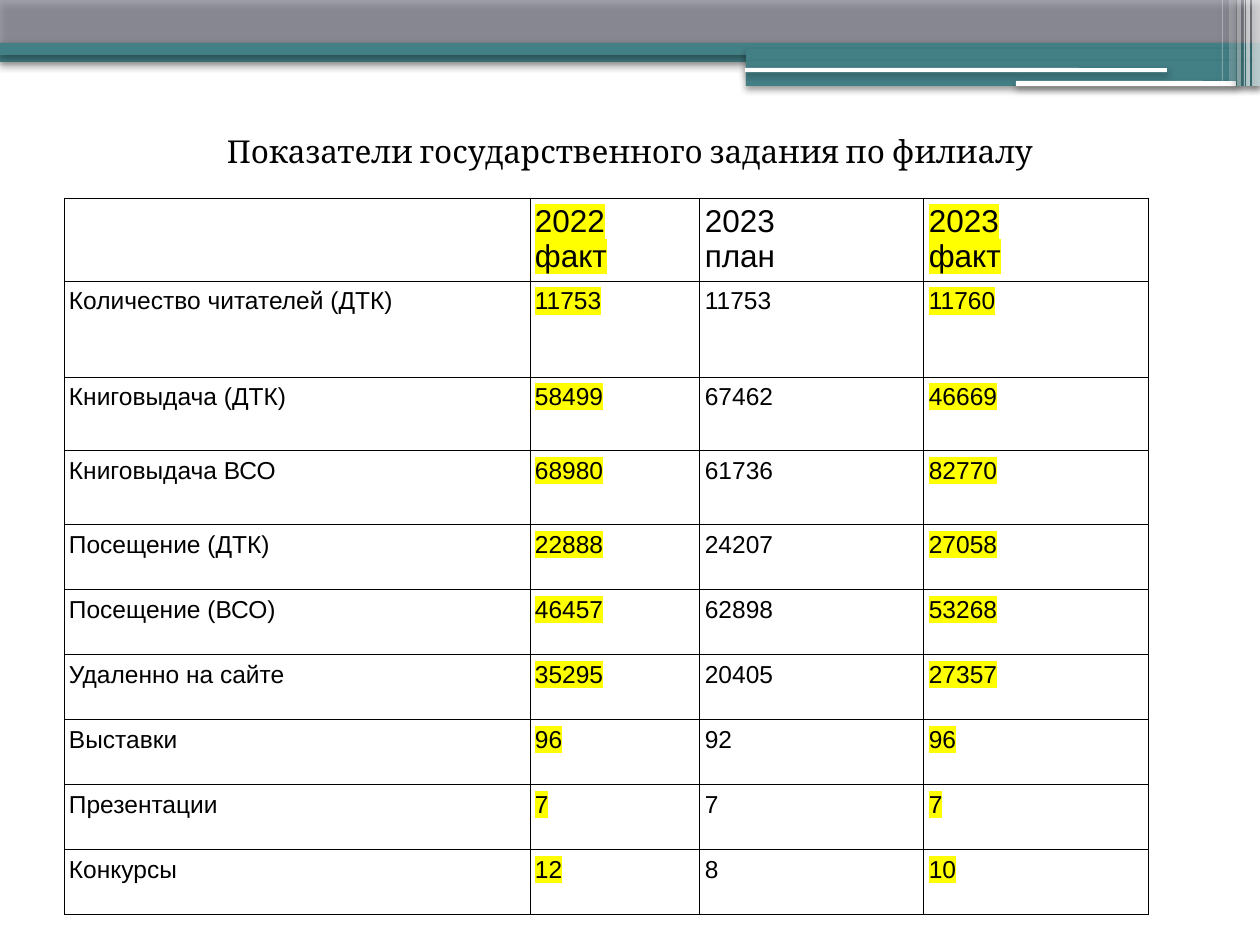
"""Build a slide with a table of state task figures under a banded header."""
from dataclasses import dataclass

from lxml.etree import SubElement
from pptx import Presentation
from pptx.dml.color import RGBColor
from pptx.enum.shapes import MSO_SHAPE
from pptx.enum.text import MSO_ANCHOR, MSO_AUTO_SIZE, PP_ALIGN
from pptx.oxml import parse_xml
from pptx.oxml.ns import nsdecls, qn
from pptx.slide import Slide
from pptx.text.text import TextFrame
from pptx.util import Pt

SCALE = 914400 / 126
COLORS = {"teal": "438086", "slate": "424456", "white": "FFFFFF",
          "black": "000000", "mark": "FFFF00"}
WIDTHS = [466, 170, 224, 225]
HEIGHTS = [83, 96, 74, 74] + [65] * 6
ROWS = [
    ("", "2022\nфакт", "2023\nплан", "2023\nфакт"),
    ("Количество читателей (ДТК)", "11753", "11753", "11760"),
    ("Книговыдача (ДТК)", "58499", "67462", "46669"),
    ("Книговыдача ВСО", "68980", "61736", "82770"),
    ("Посещение (ДТК)", "22888", "24207", "27058"),
    ("Посещение (ВСО)", "46457", "62898", "53268"),
    ("Удаленно на сайте", "35295", "20405", "27357"),
    ("Выставки", "96", "92", "96"),
    ("Презентации", "7", "7", "7"),
    ("Конкурсы", "12", "8", "10"),
]
FACTS = (1, 3)


@dataclass
class Bar:
    left: int
    top: int
    width: int
    height: int
    color: str = "teal"
    alpha: int = 100
    round: bool = False


BARS = [
    Bar(0, 50, 1260, 12),
    Bar(0, 0, 1260, 43, "slate", 50),
    Bar(0, 43, 1260, 12),
    Bar(746, 49, 514, 12),
    Bar(746, 61, 514, 25),
    Bar(745, 68, 422, 4, "white", round=True),
    Bar(1016, 81, 220, 5, "white", round=True),
    Bar(1252, 0, 8, 86, "white", 65),
    Bar(1246, 0, 4, 86, "white", 65),
    Bar(1244, 0, 1, 86, "white", 60),
    Bar(1237, 0, 4, 86, "white", 40),
    Bar(1229, 0, 7, 81, "white", 20),
    Bar(1222, 0, 1, 81, "white", 30),
]


def px(size: int) -> int:
    """Turn pixels into EMU."""
    return round(size * SCALE)


def rgb(name: str) -> RGBColor:
    """Look up a colour by name."""
    return RGBColor.from_string(COLORS[name])


def draw_bar(slide: Slide, bar: Bar) -> None:
    """Draw one header bar with a soft shadow."""
    kind = MSO_SHAPE.ROUNDED_RECTANGLE if bar.round else MSO_SHAPE.RECTANGLE
    shape = slide.shapes.add_shape(
        kind, px(bar.left), px(bar.top), px(bar.width), px(bar.height))
    shape.fill.solid()
    shape.fill.fore_color.rgb = rgb(bar.color)
    shape.line.fill.background()
    props = shape._element.spPr
    if bar.alpha < 100:
        tint = props.find(qn("a:solidFill"))[0]
        SubElement(tint, qn("a:alpha"), val=str(bar.alpha * 1000))
    props.append(parse_xml(
        f'<a:effectLst {nsdecls("a")}><a:outerShdw blurRad="{Pt(4.1)}" '
        f'dist="{Pt(2)}" dir="5400000" algn="ctr" rotWithShape="0">'
        f'<a:srgbClr val="{COLORS["black"]}"><a:alpha val="40000"/>'
        '</a:srgbClr></a:outerShdw></a:effectLst>'))


def style(frame: TextFrame, face: str, size: int, mark: bool = False) -> None:
    """Format all runs of a text frame."""
    for para in frame.paragraphs:
        for run in para.runs:
            run.font.name = face
            run.font.size = Pt(size)
            run.font.color.rgb = rgb("black")
            if mark:
                fill = run._r.rPr.find(qn("a:solidFill"))
                fill.addnext(parse_xml(
                    f'<a:highlight {nsdecls("a")}><a:srgbClr '
                    f'val="{COLORS["mark"]}"/></a:highlight>'))


def draw_title(slide: Slide, text: str) -> None:
    """Place and format the title above the bars."""
    title = slide.shapes.title
    title.left, title.top, title.width, title.height = map(
        px, (63, 77, 1134, 147))
    frame = title.text_frame
    frame.text = text
    frame.auto_size = MSO_AUTO_SIZE.NONE
    frame.vertical_anchor = MSO_ANCHOR.MIDDLE
    frame.margin_left = frame.margin_right = 0
    frame.margin_top = frame.margin_bottom = 0
    frame.paragraphs[0].alignment = PP_ALIGN.CENTER
    style(frame, "Cambria", 18)
    title._element.getparent().append(title._element)


def draw_table(slide: Slide) -> None:
    """Draw the table and mark the columns of actual figures."""
    table = slide.shapes.add_table(
        len(ROWS), len(WIDTHS), px(64), px(198),
        px(sum(WIDTHS)), px(sum(HEIGHTS))).table
    table.first_row = table.horz_banding = False
    for col, width in zip(table.columns, WIDTHS):
        col.width = px(width)
    for i, (row, height) in enumerate(zip(ROWS, HEIGHTS)):
        table.rows[i].height = px(height)
        for j, text in enumerate(row):
            cell = table.cell(i, j)
            cell.margin_left = cell.margin_right = px(5)
            cell.margin_top = cell.margin_bottom = px(6)
            cell.fill.background()
            cell.text_frame.text = text
            style(cell.text_frame, "Arial", 14 if i else 18, j in FACTS)
            props = cell._tc.get_or_add_tcPr()
            for k, side in enumerate("LRTB"):
                props.insert(k, parse_xml(
                    f'<a:ln{side} {nsdecls("a")} w="{Pt(0.57)}"><a:solidFill>'
                    f'<a:srgbClr val="{COLORS["black"]}"/></a:solidFill>'
                    f'</a:ln{side}>'))


def main() -> None:
    """Build and save the deck."""
    deck = Presentation()
    deck.slide_width, deck.slide_height = px(1260), px(945)
    slide = deck.slides.add_slide(deck.slide_layouts[5])
    for bar in BARS:
        draw_bar(slide, bar)
    draw_title(slide, "Показатели государственного задания по филиалу")
    draw_table(slide)
    deck.save("out.pptx")


if __name__ == "__main__":
    main()
